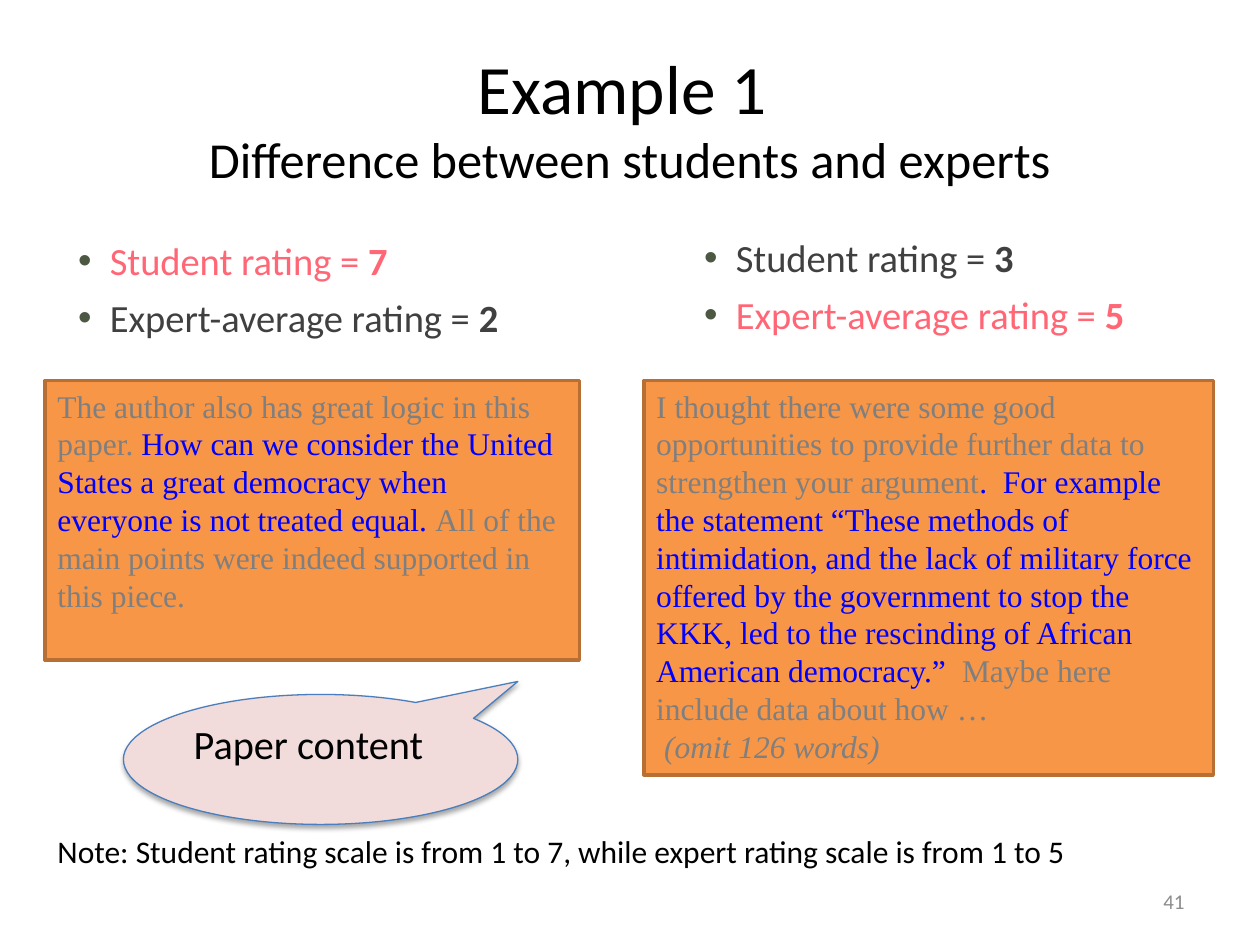
from dataclasses import dataclass

from lxml import etree
from pptx import Presentation
from pptx.dml.color import RGBColor
from pptx.enum.shapes import MSO_SHAPE
from pptx.enum.text import MSO_ANCHOR, MSO_AUTO_SIZE, PP_ALIGN
from pptx.oxml.ns import qn
from pptx.util import Cm, Pt

RECT = MSO_SHAPE.RECTANGLE
BUBBLE = MSO_SHAPE.OVAL_CALLOUT
TOP, MIDDLE = MSO_ANCHOR.TOP, MSO_ANCHOR.MIDDLE
LEFT, CENTER, RIGHT = PP_ALIGN.LEFT, PP_ALIGN.CENTER, PP_ALIGN.RIGHT
FIXED = MSO_AUTO_SIZE.NONE


@dataclass(frozen=True)
class Theme:
    sans: str = "Calibri"
    serif: str = "Times New Roman"
    ink: str = "000000"
    dark: str = "404040"
    gray: str = "7F7F7F"
    pale: str = "8C8C8C"
    blue: str = "0000FF"
    red: str = "FF6776"
    dot: str = "4D5843"
    box: str = "F79646"
    edge: str = "B76F34"
    pink: str = "F2DCDB"
    rim: str = "4B7EBC"
    head: float = 39.6
    sub: float = 28.8
    talk: float = 23
    list: float = 22
    text: float = 18
    small: float = 12


class Page:
    def __init__(self, slide, theme):
        self.slide = slide
        self.theme = theme

    def place(self, shape, area):
        shape.left, shape.top, shape.width, shape.height = map(Cm, area)
        return shape

    def fit(self, shape, anchor=TOP, wrap=True):
        frame = shape.text_frame
        frame.auto_size = FIXED
        frame.word_wrap = wrap
        frame.vertical_anchor = anchor
        return frame

    def style(self, para, size, color, face=None, align=LEFT):
        para.alignment = align
        para.font.name = face or self.theme.sans
        para.font.size = Pt(size)
        para.font.color.rgb = RGBColor.from_string(color)

    def add_run(self, para, text, color=None):
        run = para.add_run()
        run.text = text
        if color:
            run.font.color.rgb = RGBColor.from_string(color)
        return run

    def title(self, area, main, sub):
        frame = self.fit(self.place(self.slide.shapes.title, area), MIDDLE)
        para = frame.paragraphs[0]
        self.style(para, self.theme.head, self.theme.ink, align=CENTER)
        self.add_run(para, main).font.size = Pt(self.theme.head)
        para.add_line_break()
        self.add_run(para, sub).font.size = Pt(self.theme.sub)

    def bullet(self, para):
        para.level = 1
        para.space_before = Pt(6)
        props = para._p.get_or_add_pPr()
        props.set("marL", str(Cm(1.6)))
        props.set("indent", str(Cm(-0.64)))
        color = etree.SubElement(props, qn("a:buClr"))
        etree.SubElement(color, qn("a:srgbClr"), val=self.theme.dot)
        etree.SubElement(props, qn("a:buFont"), typeface="Arial")
        etree.SubElement(props, qn("a:buChar"), char="•")

    def ratings(self, index, area, rows):
        frame = self.fit(self.place(self.slide.placeholders[index], area))
        for i, (label, score, color) in enumerate(rows):
            para = frame.add_paragraph() if i else frame.paragraphs[0]
            self.bullet(para)
            self.style(para, self.theme.list, color)
            self.add_run(para, f"{label} rating = ")
            self.add_run(para, score).font.bold = True

    def shape(self, kind, area, fill, line, width):
        shape = self.slide.shapes.add_shape(kind, *map(Cm, area))
        shape.shadow.inherit = False
        shape.fill.solid()
        shape.fill.fore_color.rgb = RGBColor.from_string(fill)
        shape.line.color.rgb = RGBColor.from_string(line)
        shape.line.width = Pt(width)
        return shape

    def quote(self, area, runs, end=None):
        theme = self.theme
        frame = self.fit(self.shape(RECT, area, theme.box, theme.edge, 2))
        para = frame.paragraphs[0]
        self.style(para, theme.text, theme.gray, theme.serif)
        for text, color in runs:
            self.add_run(para, text, color)
        if end:
            para = frame.add_paragraph()
            self.style(para, theme.text, theme.gray, theme.serif)
            para.font.italic = True
            self.add_run(para, end)

    def callout(self, area, tip, text):
        theme = self.theme
        shape = self.shape(BUBBLE, area, theme.pink, theme.rim, 0.75)
        shape.adjustments[0], shape.adjustments[1] = tip
        effects = shape._element.spPr.find(qn("a:effectLst"))
        shade = etree.SubElement(
            effects, qn("a:outerShdw"), blurRad=str(Pt(3.1)),
            dist=str(Pt(1.8)), dir="5400000", rotWithShape="0")
        color = etree.SubElement(shade, qn("a:srgbClr"), val=theme.ink)
        etree.SubElement(color, qn("a:alpha"), val="35000")
        para = self.fit(shape).paragraphs[0]
        self.style(para, theme.talk, theme.ink)
        self.add_run(para, text)

    def label(self, area, text, size, color, align=LEFT, anchor=TOP, wrap=True):
        box = self.slide.shapes.add_textbox(*map(Cm, area))
        para = self.fit(box, anchor, wrap).paragraphs[0]
        self.style(para, size, color, align=align)
        self.add_run(para, text)


def main():
    deck = Presentation()
    deck.slide_width, deck.slide_height = Cm(25.4), Cm(19.05)
    theme = Theme()
    page = Page(deck.slides.add_slide(deck.slide_layouts[3]), theme)
    near, far, row = 0.91, 12.98, 7.67

    page.title((1.27, 0.76, 22.86, 3.18), "Example 1 ",
               "Difference between students and experts")
    page.ratings(1, (0.36, 4.65, 10.72, 4.55), [
        ("Student", "7", theme.red), ("Expert-average", "2", theme.dark)])
    page.ratings(2, (far, 4.6, 10.72, 4.55), [
        ("Student", "3", theme.dark), ("Expert-average", "5", theme.red)])
    page.quote((near, row, 10.77, 5.64), [
        ("The author also has great logic in this paper. ", theme.gray),
        ("How can we consider the United States a great democracy when "
         "everyone is not treated equal. ", theme.blue),
        ("All of the main points were indeed supported in this piece.",
         theme.gray)])
    page.quote((far, row, 11.48, 7.95), [
        ("I thought there were some good opportunities to provide further "
         "data to strengthen your argument", theme.gray),
        (".  For example the statement “These methods of intimidation, and "
         "the lack of military force offered by the government to stop the "
         "KKK, led to the rescinding of African American democracy.”  ",
         theme.blue),
        ("Maybe here include data about how …", theme.gray)],
        " (omit 126 words)")
    page.callout((2.49, 14, 7.95, 2.62), (0.5, -0.6), "Paper content")
    page.label((near, 16.64, 21.74, 1.02),
               "Note: Student rating scale is from 1 to 7, while expert "
               "rating scale is from 1 to 5", theme.text, theme.ink, wrap=False)
    page.label((18.21, 17.65, 5.92, 1.02), "41", theme.small, theme.pale,
               RIGHT, MIDDLE)
    deck.save("out.pptx")


if __name__ == "__main__":
    main()
